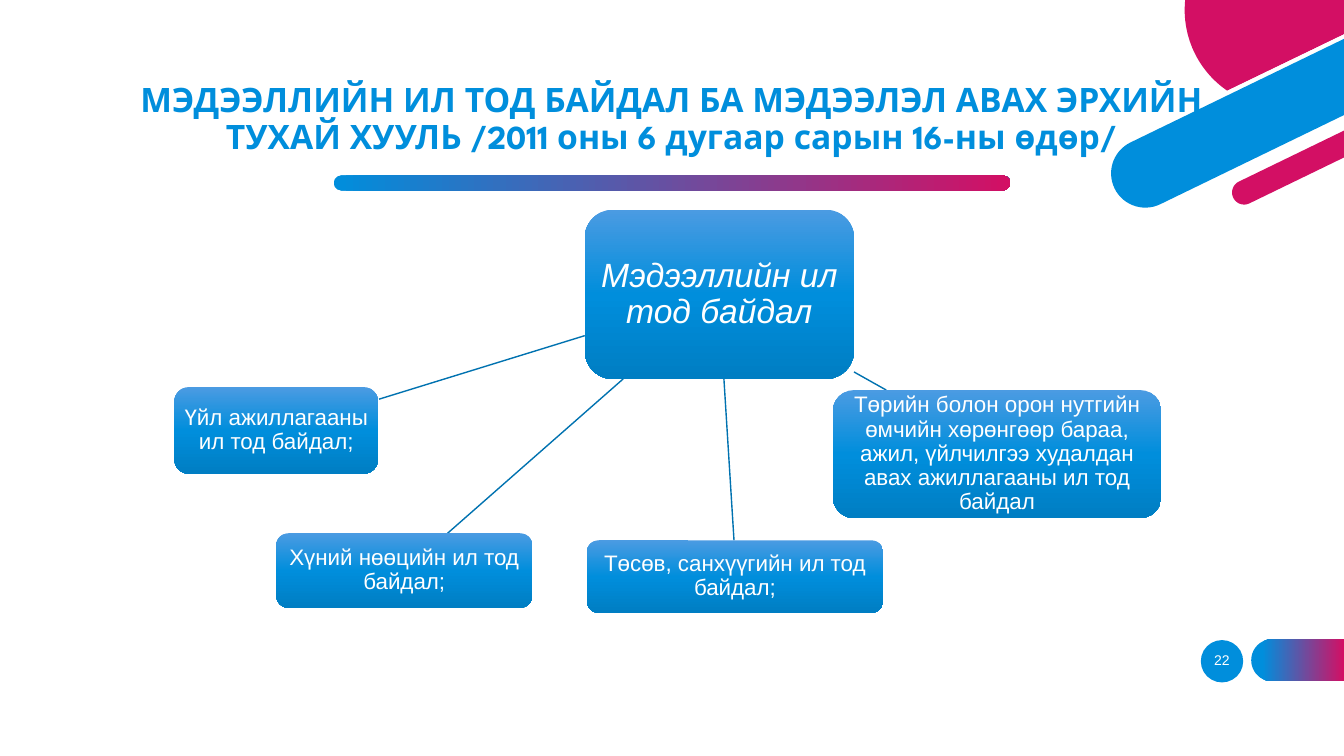
from copy import deepcopy
from dataclasses import dataclass
from math import cos, radians, sin, tan

from lxml import etree
from pptx import Presentation
from pptx import util as u
from pptx.dml.color import RGBColor
from pptx.enum import shapes as sh, text as tx
from pptx.oxml import ns

COLORS = {
    "blue": "008EDC", "light": "4B9BE2", "deep": "007EC3",
    "link": "0072B0", "crimson": "D30F64", "white": "FFFFFF",
}
Stops = tuple[tuple[int, str], ...]
Point = tuple[float, float]
BRAND: Stops = ((0, "blue"), (100, "crimson"))
TAB: Stops = ((12, "blue"), (100, "crimson"))
GLOSS: Stops = ((0, "light"), (50, "blue"), (100, "deep"))
WIDTH, HEIGHT = 13.33, 7.5
TILT = 25.9
RIM = 0.02


@dataclass(frozen=True)
class Bar:
    """Bar with a round left end, rising to the right edge of the slide."""
    fill: str | Stops
    center: Point
    radius: float
    tilt: float = TILT


@dataclass(frozen=True)
class Box:
    words: str
    at: tuple[float, float, float, float]
    size: int = 16
    inset: float = 0.04
    italic: bool = False
    link: tuple[float, float, float, float] | None = None


BIG_BAR, SMALL_BAR = (11.36, 1.72), (12.34, 1.91)
BARS = (
    Bar("white", BIG_BAR, 0.36 + RIM),
    Bar("blue", BIG_BAR, 0.36 - RIM),
    Bar("white", SMALL_BAR, 0.14 + RIM),
    Bar("crimson", SMALL_BAR, 0.14 - RIM),
    Bar(TAB, (12.62, 6.55), 0.21, tilt=0),
)

BOXES = (
    Box("Мэдээллийн ил тод байдал", (5.8, 2.08, 2.67, 1.68), 24, 0.07, True),
    Box("Үйл ажиллагааны ил тод байдал;", (1.73, 3.84, 2.02, 0.86),
        link=(5.8, 3.33, 3.76, 3.96)),
    Box("Хүний нөөцийн ил тод байдал;", (2.74, 5.29, 2.54, 0.74),
        link=(6.18, 3.76, 4.44, 5.29)),
    Box("Төсөв, санхүүгийн ил тод байдал;", (5.82, 5.36, 2.94, 0.72),
        link=(7.18, 3.76, 7.28, 5.36)),
    Box("Төрийн болон орон нутгийн өмчийн хөрөнгөөр бараа, ажил, үйлчилгээ "
        "худалдан авах ажиллагааны ил тод байдал", (8.26, 3.87, 3.26, 1.27),
        link=(8.47, 3.69, 8.79, 3.87)),
)


def rgb(name: str) -> RGBColor:
    return RGBColor.from_string(COLORS[name])


def paint(shape, fill: str | Stops, angle: int = 0) -> None:
    """Fill a shape with one colour or a gradient, without line or shadow."""
    shape.shadow.inherit = False
    shape.line.fill.background()
    if isinstance(fill, str):
        shape.fill.solid()
        shape.fill.fore_color.rgb = rgb(fill)
        return
    shape.fill.gradient()
    shape.fill.gradient_angle = angle
    stop_list = shape._element.spPr.find(ns.qn("a:gradFill")).find(ns.qn("a:gsLst"))
    while len(stop_list) < len(fill):
        stop_list.append(deepcopy(stop_list[0]))
    for stop, (percent, name) in zip(shape.fill.gradient_stops, fill):
        stop.position = percent / 100
        stop.color.rgb = rgb(name)


def arc(center: Point, radius: float, first: float, last: float) -> list[Point]:
    """Points on a circle between two angles, clockwise from the right."""
    parts = 30
    angles = [radians(first + (last - first) * i / parts) for i in range(parts + 1)]
    return [(center[0] + radius * cos(a), center[1] + radius * sin(a)) for a in angles]


def draw_outline(slide, fill: str | Stops, points: list[Point]) -> None:
    emu = [(u.Inches(x), u.Inches(y)) for x, y in points]
    builder = slide.shapes.build_freeform(*emu[0])
    builder.add_line_segments(emu[1:], close=True)
    paint(builder.convert_to_shape(), fill)


def draw_bar(slide, bar: Bar) -> None:
    slope = radians(bar.tilt)
    middle = bar.center[1] - tan(slope) * (WIDTH - bar.center[0])
    half = bar.radius / cos(slope)
    round_end = arc(bar.center, bar.radius, 90 - bar.tilt, 270 - bar.tilt)
    draw_outline(slide, bar.fill,
                 round_end + [(WIDTH, middle - half), (WIDTH, middle + half)])


def write(shape, words: str, size: int, color: str = "white", font: str = "Arial",
          bold: bool = False, italic: bool = False,
          anchor=tx.MSO_ANCHOR.MIDDLE, inset: float | None = None) -> None:
    frame = shape.text_frame
    frame.word_wrap = True
    frame.vertical_anchor = anchor
    if inset is not None:
        frame.margin_left = frame.margin_right = u.Inches(inset)
        frame.margin_top = frame.margin_bottom = u.Inches(inset)
    paragraph = frame.paragraphs[0]
    paragraph.alignment = tx.PP_ALIGN.CENTER
    paragraph.line_spacing = 0.9
    run = paragraph.add_run()
    run.text = words
    run.font.name, run.font.size = font, u.Pt(size)
    run.font.bold, run.font.italic = bold, italic
    run.font.color.rgb = rgb(color)


def draw_box(slide, box: Box) -> None:
    """Draw a box, with the line that joins it to the central one."""
    if box.link:
        link = slide.shapes.add_connector(
            sh.MSO_CONNECTOR.STRAIGHT, *map(u.Inches, box.link))
        link.line.color.rgb = rgb("link")
        link.line.width = u.Pt(1)
        etree.SubElement(link._element.spPr, ns.qn("a:effectLst"))
    body = slide.shapes.add_shape(
        sh.MSO_SHAPE.ROUNDED_RECTANGLE, *map(u.Inches, box.at))
    paint(body, GLOSS, 270)
    write(body, box.words, box.size, italic=box.italic, inset=box.inset)


def main() -> None:
    deck = Presentation()
    deck.slide_width, deck.slide_height = u.Inches(WIDTH), u.Inches(HEIGHT)
    slide = deck.slides.add_slide(deck.slide_layouts[6])

    corner_disc = arc((12.72, 0.1), 0.97, 186, 124.5)
    draw_outline(slide, "crimson", corner_disc + [(WIDTH, 0.34), (WIDTH, 0)])
    for bar in BARS:
        draw_bar(slide, bar)

    underline = slide.shapes.add_shape(
        sh.MSO_SHAPE.ROUNDED_RECTANGLE, *map(u.Inches, (3.31, 1.74, 6.71, 0.15)))
    underline.adjustments[0] = 0.5
    paint(underline, BRAND)

    title = slide.shapes.add_textbox(*map(u.Inches, (0.91, 0.27, 11.5, 1.33)))
    write(title, "МЭДЭЭЛЛИЙН ИЛ ТОД БАЙДАЛ БА МЭДЭЭЛЭЛ АВАХ ЭРХИЙН ТУХАЙ ХУУЛЬ "
          "/2011 оны 6 дугаар сарын 16-ны өдөр/", 24, "blue", "League Spartan",
          bold=True, anchor=tx.MSO_ANCHOR.BOTTOM)

    page_number = slide.shapes.add_shape(
        sh.MSO_SHAPE.OVAL, *map(u.Inches, (11.91, 6.35, 0.42, 0.42)))
    paint(page_number, "blue")
    write(page_number, "22", 10, inset=0)

    for box in BOXES:
        draw_box(slide, box)

    deck.save("out.pptx")


if __name__ == "__main__":
    main()
